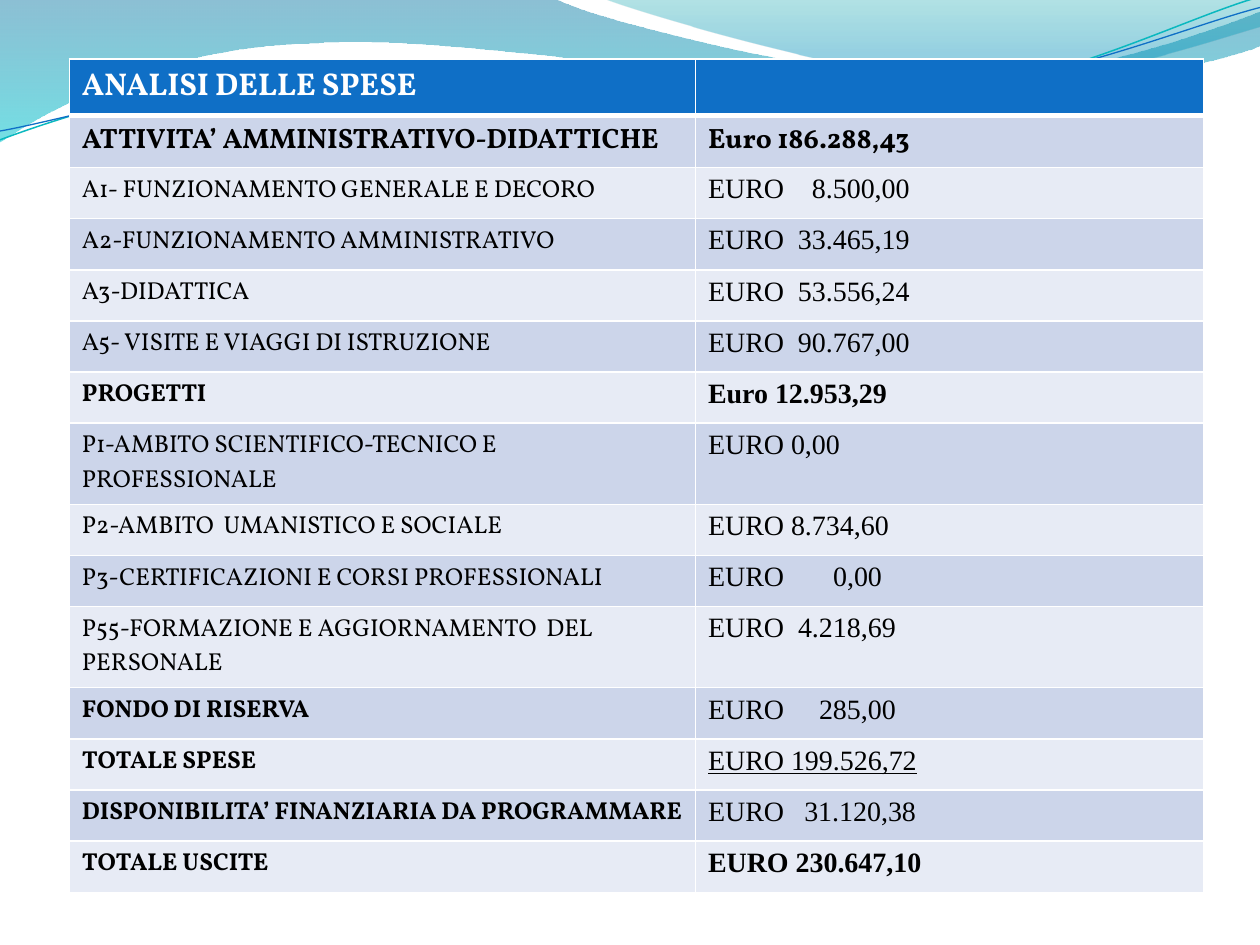
import math

import lxml.etree
import pptx
import pptx.dml.color
import pptx.oxml.ns
import pptx.util

Inches = pptx.util.Inches
RGBColor = pptx.dml.color.RGBColor
qn = pptx.oxml.ns.qn

WHITE = RGBColor(0xFF, 0xFF, 0xFF)
BLACK = RGBColor(0x00, 0x00, 0x00)
BLUE = RGBColor(0x0F, 0x6F, 0xC6)
TEAL = RGBColor(0x0A, 0xB8, 0xBF)
DARK = RGBColor(0xCC, 0xD5, 0xEA)
LIGHT = RGBColor(0xE7, 0xEB, 0xF5)
DEEP = RGBColor(0x00, 0x74, 0xA1)
AQUA = RGBColor(0x00, 0xC6, 0xCF)
GREEN = RGBColor(0x00, 0xA1, 0xA9)
SKY = RGBColor(0x00, 0x8B, 0xBF)
SERIF, TIMES = "Vollkorn", "Times New Roman"

deck = pptx.Presentation()
deck.slide_width, deck.slide_height = Inches(10), Inches(7.5)
slide = deck.slides.add_slide(deck.slide_layouts[6])


def add_wave(points, kinds, close):
    """Draw a path; each letter of kinds is a line (L) or a cubic curve (C)."""
    spots = [(Inches(x), Inches(y)) for x, y in points]
    builder = slide.shapes.build_freeform(*spots[0])
    builder.add_line_segments(spots[1:], close=close)
    wave = builder.convert_to_shape()
    wave.shadow.inherit = False
    # Join each three points of a curve into one cubic segment
    lines = iter(wave.element.xpath(".//a:lnTo"))
    for kind in kinds:
        line = next(lines)
        if kind == "C":
            line.addprevious(curve := lxml.etree.Element(qn("a:cubicBezTo")))
            for node in (line, next(lines), next(lines)):
                curve.append(node[0])
                node.getparent().remove(node)
    return wave


def style_cell(cell, text, font, size, bold, color, fill):
    cell.fill.solid()
    cell.fill.fore_color.rgb = fill
    cell.text_frame.text = text
    for run in cell.text_frame.paragraphs[0].runs:
        run.font.name, run.font.size = font, pptx.util.Pt(size)
        run.font.bold, run.font.color.rgb = bold, color


# Shaded waves: points, segment kinds, gradient stops (place, colour, opacity)
bands = [
    ([(0, 0), (4.4, -0.01), (4.76, 0.17), (6.64, 0.63), (7.58, 0.63),
      (8.53, 0.63), (9.58, 0.26), (10, 0.09), (10.01, 0.36),
      (9.83, 0.44), (8.7, 0.76), (7.46, 0.75), (6.22, 0.75), (3.82, 0.28), (2.57, 0.34),
      (1.29, 0.36), (0.46, 0.83), (-0.01, 1.13), (0, 0)],
     "LCCLCCCL", [(0, DEEP, 45), (1, AQUA, 55)]),
    ([(4.79, -0.01), (5.09, 0.11), (6.82, 0.62), (7.69, 0.65),
      (8.56, 0.69), (9.61, 0.32), (10, 0.21), (10, 0), (4.79, -0.01)],
     "CCLL", [(0, GREEN, 30), (0.8, SKY, 45)]),
]
for points, kinds, stops in bands:
    band = add_wave(points, kinds, True)
    band.line.fill.background()
    band.fill.gradient()
    band.fill.gradient_angle = 270
    for stop, (place, color, _) in zip(band.fill.gradient_stops, stops):
        stop.position, stop.color.rgb = place, color
    for node, (_, _, alpha) in zip(band.element.xpath(".//a:gs/a:srgbClr"), stops):
        lxml.etree.SubElement(node, qn("a:alpha")).set("val", str(alpha * 1000))

# Thin wave lines, laid level about their middle and then tilted
strands = [
    ([(0, 1.11), (0.48, 0.93), (1.58, 0.57), (2.77, 0.52), (3.95, 0.47), (5.93, 0.89),
      (7.13, 0.8), (8.33, 0.71), (9.38, 0.15), (9.98, -0.02)], (4.99, 0.58), TEAL, 0.85),
    ([(0, 1.04), (0.47, 0.96), (1.64, 0.61), (2.83, 0.56), (4.03, 0.51), (5.97, 0.84),
      (7.17, 0.75), (8.36, 0.67), (9.41, 0.21), (10, 0.06)], (5, 0.59), BLUE, 0.75),
]
TILT = 2.7
cos, sin = math.cos(math.radians(TILT)), math.sin(math.radians(TILT))
for points, (mid_x, mid_y), color, width in strands:
    level = [(mid_x + (x - mid_x) * cos - (y - mid_y) * sin,
              mid_y + (x - mid_x) * sin + (y - mid_y) * cos) for x, y in points]
    strand = add_wave(level, "CCC", False)
    strand.rotation = 360 - TILT
    strand.fill.background()
    strand.line.color.rgb = color
    strand.line.width = pptx.util.Pt(width)

# Expenses: label, label bold, amount, amount bold, right tab stop for the figure
rows = [
    ("ATTIVITA’ AMMINISTRATIVO-DIDATTICHE", True, "Euro 186.288,43", True, None),
    ("A1- FUNZIONAMENTO GENERALE E DECORO", False, "EURO\t8.500,00", False, 1.6),
    ("A2-FUNZIONAMENTO AMMINISTRATIVO", False, "EURO\t33.465,19", False, 1.6),
    ("A3-DIDATTICA", False, "EURO\t53.556,24", False, 1.6),
    ("A5- VISITE E VIAGGI DI ISTRUZIONE", False, "EURO\t90.767,00", False, 1.6),
    ("PROGETTI", True, "Euro 12.953,29", True, None),
    ("P1-AMBITO SCIENTIFICO-TECNICO E PROFESSIONALE", False, "EURO 0,00", False, None),
    ("P2-AMBITO  UMANISTICO E SOCIALE", False, "EURO 8.734,60", False, None),
    ("P3-CERTIFICAZIONI E CORSI PROFESSIONALI", False, "EURO\t0,00", False, 1.38),
    ("P55-FORMAZIONE E AGGIORNAMENTO  DEL PERSONALE", False, "EURO\t4.218,69", False, 1.49),
    ("FONDO DI RISERVA", True, "EURO\t285,00", False, 1.49),
    ("TOTALE SPESE", True, "EURO 199.526,72", False, None),
    ("DISPONIBILITA’ FINANZIARIA DA PROGRAMMARE", True, "EURO\t31.120,38", False, 1.65),
    ("TOTALE USCITE", True, "EURO 230.647,10", True, None),
]
table = slide.shapes.add_table(len(rows) + 1, 2, Inches(0.55), Inches(0.47),
                               Inches(9), Inches(6.09)).table
table.columns[0].width, table.columns[1].width = Inches(4.97), Inches(4.03)

# Header row with a thick white rule below
for col, text in enumerate(("ANALISI DELLE SPESE", "")):
    cell = table.cell(0, col)
    style_cell(cell, text, SERIF, 18, True, WHITE, BLUE)
    props = cell._tc.get_or_add_tcPr()
    for place, (side, width) in enumerate((("L", 1), ("R", 1), ("T", 1), ("B", 3))):
        edge = lxml.etree.Element(qn("a:ln" + side), w=str(pptx.util.Pt(width)))
        paint = lxml.etree.SubElement(edge, qn("a:solidFill"))
        lxml.etree.SubElement(paint, qn("a:srgbClr")).set("val", str(WHITE))
        props.insert(place, edge)

# Body rows; the first is a larger heading
for row, (label, strong, amount, heavy, tab) in enumerate(rows, 1):
    fill = DARK if row % 2 else LIGHT
    first = row == 1
    style_cell(table.cell(row, 0), label, SERIF, 16 if first else 14, strong, BLACK, fill)
    cell = table.cell(row, 1)
    style_cell(cell, amount, SERIF if first else TIMES, 16, heavy, BLACK, fill)
    para = cell.text_frame.paragraphs[0]
    if label == "TOTALE SPESE":
        para.runs[0].font.underline = True
    if tab:
        props = para._p.get_or_add_pPr()
        tabs = lxml.etree.SubElement(props, qn("a:tabLst"))
        mark = lxml.etree.SubElement(tabs, qn("a:tab"))
        mark.set("pos", str(Inches(tab)))
        mark.set("algn", "r")

deck.save("out.pptx")
